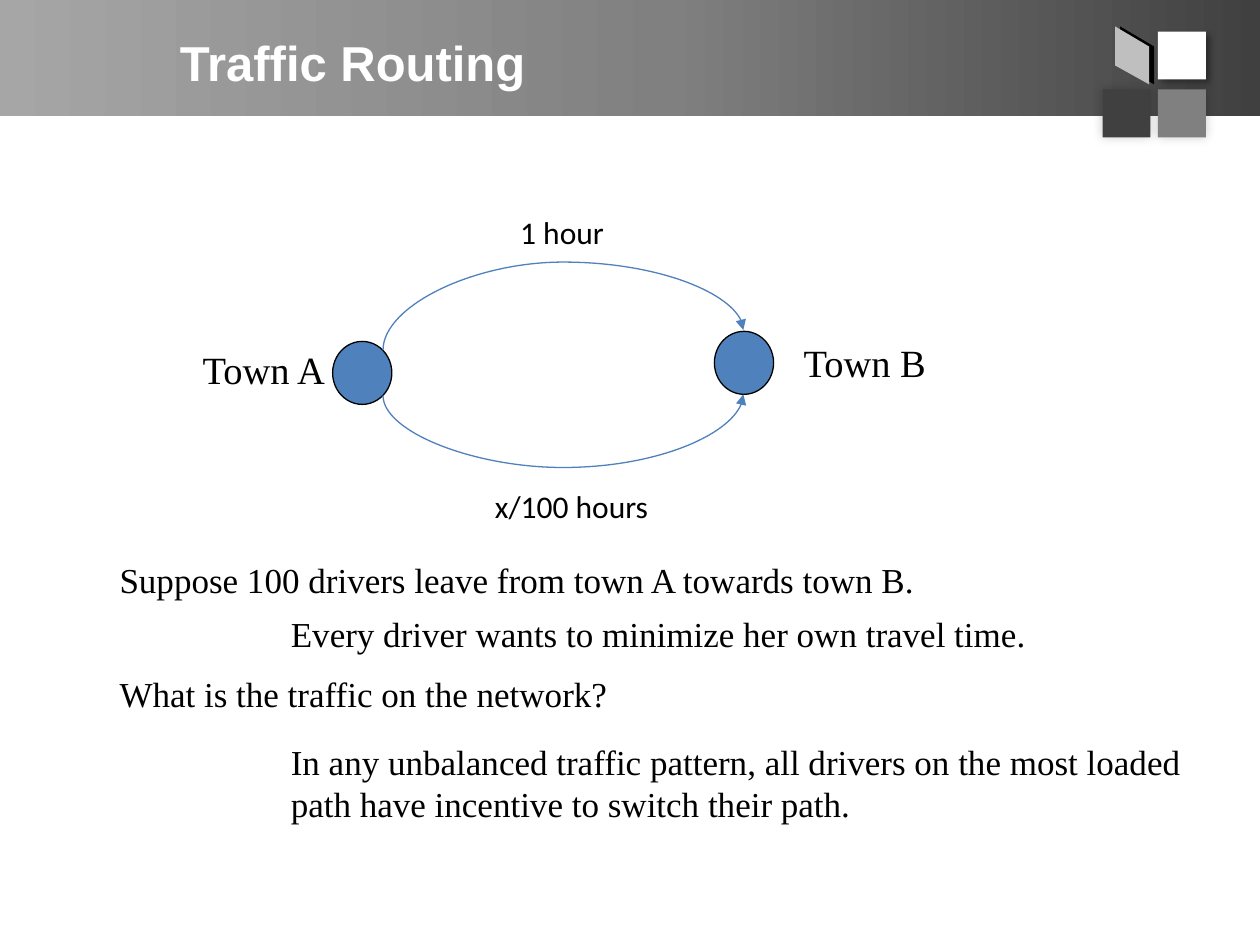
import copy

import lxml.etree
import pptx
import pptx.dml.color
import pptx.enum.shapes
import pptx.enum.text
import pptx.oxml
import pptx.oxml.ns
import pptx.util

Inches = pptx.util.Inches
Pt = pptx.util.Pt
qn = pptx.oxml.ns.qn
SHAPES = pptx.enum.shapes.MSO_SHAPE

COLORS = {
    "black": "000000", "white": "FFFFFF", "blue": "4F81BD",
    "silver": "BFBFBF", "light": "A6A6A6", "gray": "808080", "dark": "404040",
}

STYLES = {
    "title": {"name": "Arial", "size": Pt(28), "bold": True, "color": "white"},
    "town": {"name": "Times New Roman", "size": Pt(22), "color": "black"},
    "body": {"name": "Times New Roman", "size": Pt(20), "color": "black"},
    "cost": {"name": "Calibri", "size": Pt(18), "color": "black"},
}

BANNER_STOPS = [(0, "light"), (0.53, "gray"), (1, "dark")]

TILE_SIZE = 0.38
TILES = [
    (8.75, 0.71, "dark", (20, 6, 0, 225)),
    (9.19, 0.71, "gray", (20, 6, 0, 315)),
    (9.19, 0.25, "white", (40, 4, 3, 45)),
]
PANEL = [(8.85, 0.21), (9.12, 0.37), (9.12, 0.67), (8.85, 0.52)]
PANEL_LAYERS = [(0.04, "black"), (0, "silver")]

TOWN_SIZE = (0.47, 0.5)
TOWNS = [(2.64, 2.71), (5.67, 2.63)]

ROADS = [
    {"start": (3.04, 2.78), "end": (5.9, 2.62), "apex": 2.08},
    {"start": (3.04, 3.14), "end": (5.9, 3.13), "apex": 3.72},
]

TEXTS = [
    ("Traffic Routing", "title", (1.33, 0.08, 8.42, 0.83), True),
    ("Town A", "town", (1.51, 2.7, 1.18, 0.47), False),
    ("Town B", "town", (6.28, 2.64, 1.18, 0.47), False),
    ("1 hour", "cost", (4.03, 1.64, 0.88, 0.4), False),
    ("x/100 hours", "cost", (3.83, 3.82, 1.43, 0.4), False),
    ("Suppose 100 drivers leave from town A towards town B.", "body",
     (0.85, 4.38, 6.55, 0.44), False),
    ("Every driver wants to minimize her own travel time.", "body",
     (2.21, 4.81, 6.08, 0.44), False),
    ("What is the traffic on the network?", "body",
     (0.85, 5.29, 4.11, 0.44), False),
    ("In any unbalanced traffic pattern, all drivers on the most loaded "
     "path have incentive to switch their path.", "body",
     (2.21, 5.83, 7.46, 0.77), True),
]


def rgb(color):
    return pptx.dml.color.RGBColor.from_string(COLORS[color])


def paint(shape, fill, outline=None):
    shape.shadow.inherit = False
    shape.fill.solid()
    shape.fill.fore_color.rgb = rgb(fill)
    if outline:
        shape.line.color.rgb = rgb(outline)
        shape.line.width = Pt(0.75)
    else:
        shape.line.fill.background()


def add_box(slide, preset, box, fill, outline=None):
    shape = slide.shapes.add_shape(preset, *map(Inches, box))
    paint(shape, fill, outline)
    return shape


def add_banner(slide):
    banner = add_box(slide, SHAPES.RECTANGLE, (0, 0, 10, 0.92), "gray")
    banner.fill.gradient()
    banner.fill.gradient_angle = 0
    stop_list = next(banner._element.spPr.iter(qn("a:gsLst")))
    stop_list.append(copy.deepcopy(stop_list[-1]))
    for stop, (position, color) in zip(banner.fill.gradient_stops, BANNER_STOPS):
        stop.position = position
        stop.color.rgb = rgb(color)


def add_shadow(shape, alpha, blur, distance, direction):
    effects = shape._element.spPr.find(qn("a:effectLst"))
    shadow = lxml.etree.SubElement(
        effects, qn("a:outerShdw"), blurRad=str(Pt(blur)), dist=str(Pt(distance)),
        dir=str(direction * 60000), algn="ctr", rotWithShape="0")
    color = lxml.etree.SubElement(shadow, qn("a:srgbClr"), val=COLORS["black"])
    lxml.etree.SubElement(color, qn("a:alpha"), val=str(alpha * 1000))


def add_panel(slide, shift, color):
    corners = [(Inches(x + shift), Inches(y)) for x, y in PANEL]
    outline = slide.shapes.build_freeform(*corners[0])
    outline.add_line_segments(corners[1:], close=True)
    paint(outline.convert_to_shape(), color)


def add_road(slide, start, end, apex):
    (x1, y1), (x2, y2) = start, end
    rise, span = y1 - y2, x2 - x1
    left = (x1 + x2 - rise) / 2
    top = (y1 + y2 - span) / 2
    road = slide.shapes.add_connector(
        pptx.enum.shapes.MSO_CONNECTOR.CURVE,
        *map(Inches, (left + rise, top + span, left, top)))
    road.line.color.rgb = rgb("blue")
    road.line.width = Pt(0.75)
    properties = road._element.spPr
    properties.find(qn("a:xfrm")).set("rot", str(90 * 60000))
    bend = round((y1 - apex) / rise * 100000)
    guides = next(properties.iter(qn("a:avLst")))
    lxml.etree.SubElement(guides, qn("a:gd"), name="adj1", fmla=f"val {bend}")
    lxml.etree.SubElement(properties.find(qn("a:ln")), qn("a:tailEnd"), type="triangle")
    lxml.etree.SubElement(properties, qn("a:effectLst"))


def add_text(slide, text, style, box, wrap):
    frame = slide.shapes.add_textbox(*map(Inches, box)).text_frame
    frame.word_wrap = wrap
    if style == "title":
        frame.vertical_anchor = pptx.enum.text.MSO_ANCHOR.MIDDLE
    else:
        frame.auto_size = pptx.enum.text.MSO_AUTO_SIZE.SHAPE_TO_FIT_TEXT
    run = frame.paragraphs[0].add_run()
    run.text = text
    for attribute, value in STYLES[style].items():
        if attribute == "color":
            run.font.color.rgb = rgb(value)
        else:
            setattr(run.font, attribute, value)


def main():
    deck = pptx.Presentation()
    deck.slide_width, deck.slide_height = Inches(10), Inches(7.5)
    slide = deck.slides.add_slide(deck.slide_layouts[6])
    add_banner(slide)
    for shift, color in PANEL_LAYERS:
        add_panel(slide, shift, color)
    for left, top, color, shadow in TILES:
        tile = add_box(slide, SHAPES.RECTANGLE, (left, top, TILE_SIZE, TILE_SIZE), color)
        add_shadow(tile, *shadow)
    for corner in TOWNS:
        add_box(slide, SHAPES.OVAL, corner + TOWN_SIZE, "blue", "black")
    for road in ROADS:
        add_road(slide, **road)
    for entry in TEXTS:
        add_text(slide, *entry)
    deck.save("out.pptx")


if __name__ == "__main__":
    main()
